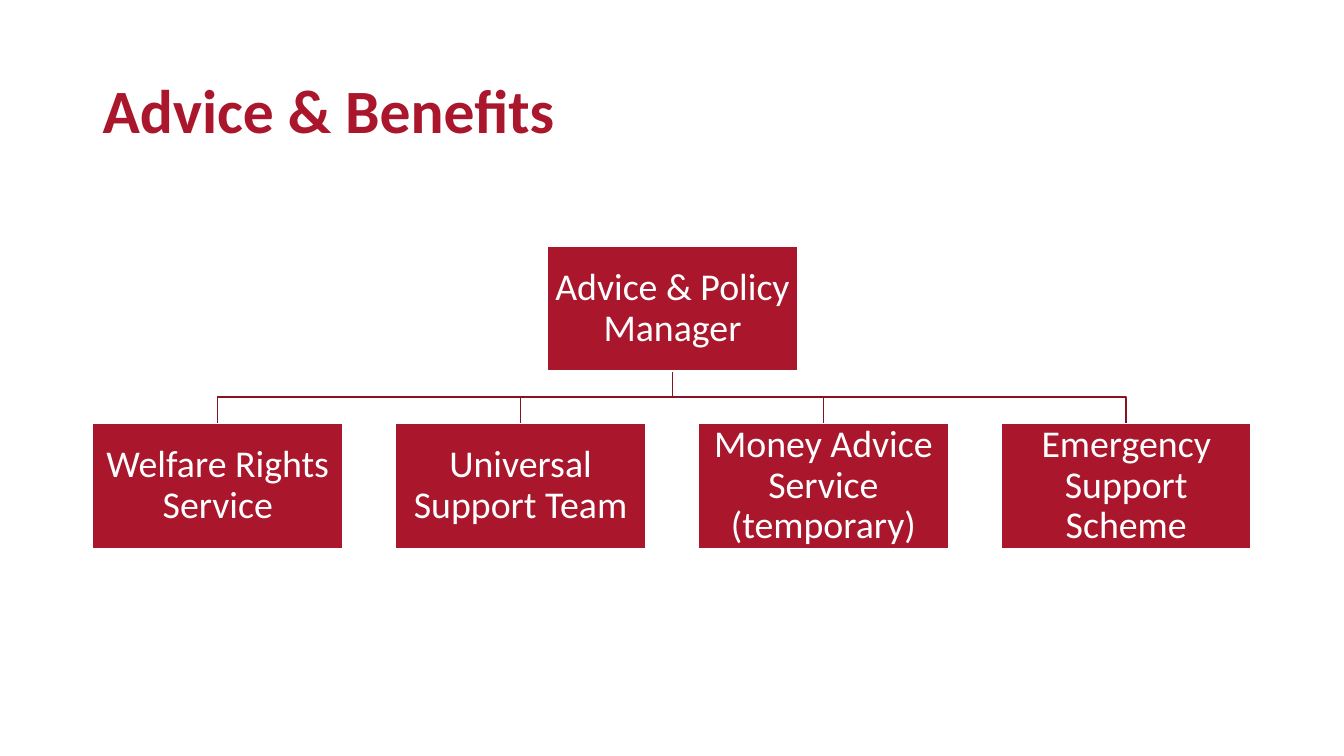
from pptx import Presentation
from pptx.dml.color import RGBColor
from pptx.enum.shapes import MSO_SHAPE
from pptx.enum.text import MSO_ANCHOR, PP_ALIGN
from pptx.util import Inches, Pt

RECTANGLE = MSO_SHAPE.RECTANGLE
MIDDLE = MSO_ANCHOR.MIDDLE
LEFT, CENTER = PP_ALIGN.LEFT, PP_ALIGN.CENTER

CRIMSON = RGBColor(0xAA, 0x17, 0x2C)
DARK_RED = RGBColor(0x88, 0x12, 0x23)
WHITE = RGBColor(0xFF, 0xFF, 0xFF)

# Chart measures in inches
BOX_WIDTH, BOX_HEIGHT = 2.48, 1.24
MANAGER_LEFT, MANAGER_TOP = 5.43, 2.44
TEAM_LEFT, TEAM_TOP, TEAM_PITCH = 0.92, 4.2, 9.01 / 3
TEAMS = [
    "Welfare Rights Service",
    "Universal Support Team",
    "Money Advice Service (temporary)",
    "Emergency Support Scheme",
]


def write(shape, text, size, color, bold=False, align=LEFT):
    frame = shape.text_frame
    frame.word_wrap = True
    frame.vertical_anchor = MIDDLE
    paragraph = frame.paragraphs[0]
    paragraph.text = text
    paragraph.alignment = align
    paragraph.line_spacing = 0.9
    paragraph.font.name = "Calibri"
    paragraph.font.size = Pt(size)
    paragraph.font.bold = bold
    paragraph.font.color.rgb = color


prs = Presentation()
prs.slide_width = Inches(13.33)
prs.slide_height = Inches(7.5)
slide = prs.slides.add_slide(prs.slide_layouts[6])

# Title
title = slide.shapes.add_textbox(Inches(0.92), Inches(0.4), Inches(11.5), Inches(1.45))
write(title, "Advice & Benefits", 44, CRIMSON, bold=True)

# Branches from the manager down to each team
positions = [(MANAGER_LEFT, MANAGER_TOP)]
positions += [(TEAM_LEFT + i * TEAM_PITCH, TEAM_TOP) for i in range(len(TEAMS))]
manager_x = Inches(MANAGER_LEFT + BOX_WIDTH / 2)
manager_bottom = Inches(MANAGER_TOP + BOX_HEIGHT)
bend_y = Inches((MANAGER_TOP + BOX_HEIGHT + TEAM_TOP) / 2)
for left, top in positions[1:]:
    team_x = Inches(left + BOX_WIDTH / 2)
    builder = slide.shapes.build_freeform(manager_x, manager_bottom)
    builder.add_line_segments(
        [(manager_x, bend_y), (team_x, bend_y), (team_x, Inches(top))], close=False
    )
    branch = builder.convert_to_shape()
    branch.shadow.inherit = False
    branch.fill.background()
    branch.line.color.rgb = DARK_RED
    branch.line.width = Pt(1)

# Manager and team boxes
for (left, top), name in zip(positions, ["Advice & Policy Manager"] + TEAMS):
    box = slide.shapes.add_shape(
        RECTANGLE, Inches(left), Inches(top), Inches(BOX_WIDTH), Inches(BOX_HEIGHT)
    )
    box.shadow.inherit = False
    box.fill.solid()
    box.fill.fore_color.rgb = CRIMSON
    box.line.color.rgb = WHITE
    box.line.width = Pt(1)
    frame = box.text_frame
    frame.margin_left = frame.margin_right = Inches(0.02)
    frame.margin_top = frame.margin_bottom = Inches(0.02)
    write(box, name, 27, WHITE, align=CENTER)

prs.save("out.pptx")
